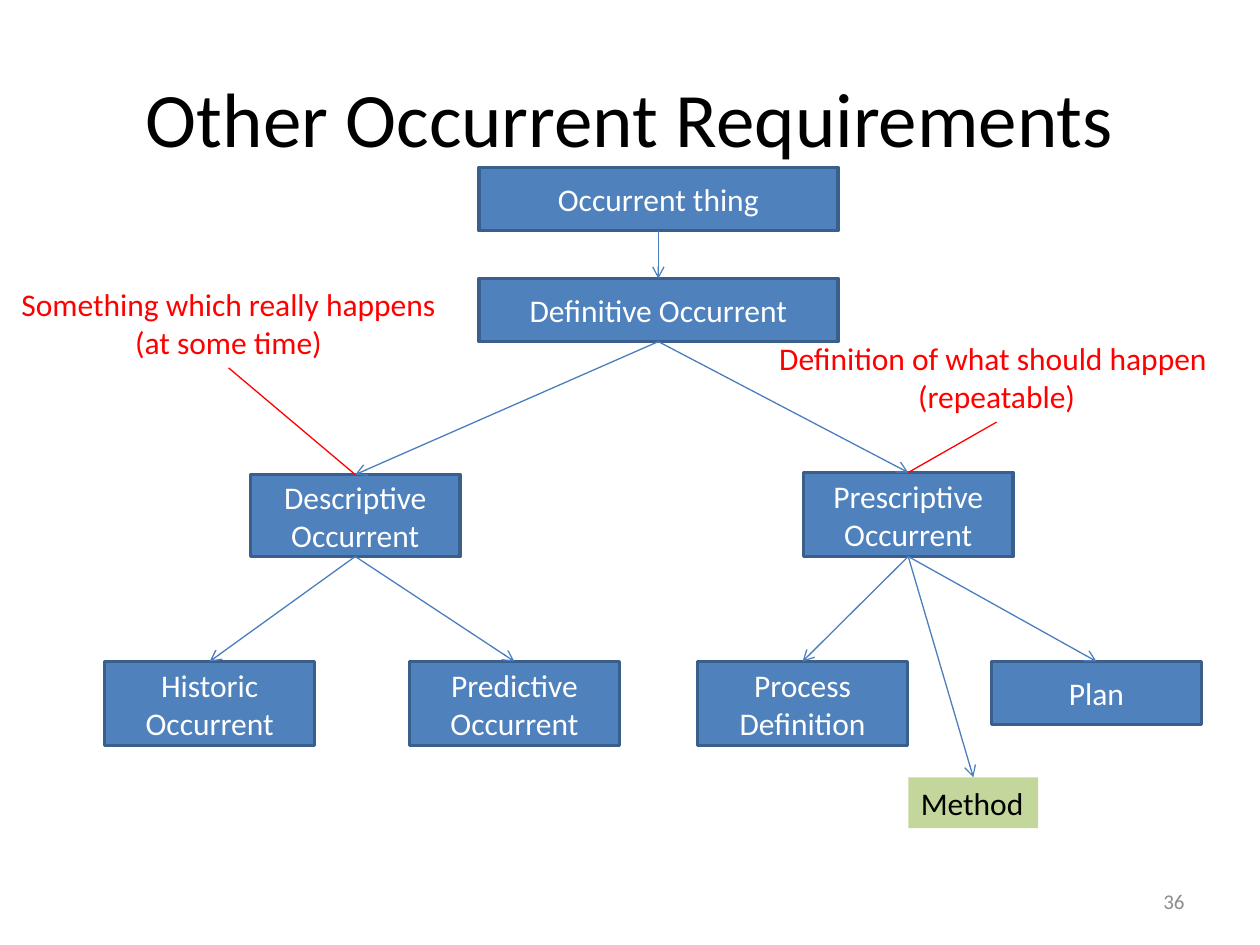
from lxml.etree import SubElement
from pptx import Presentation
from pptx.dml.color import RGBColor
from pptx.enum.shapes import MSO_CONNECTOR, MSO_SHAPE
from pptx.enum.text import MSO_ANCHOR as Anchor, PP_ALIGN as Align
from pptx.oxml.ns import qn
from pptx.util import Pt

BLACK = RGBColor(0x00, 0x00, 0x00)
WHITE = RGBColor(0xFF, 0xFF, 0xFF)
RED = RGBColor(0xFF, 0x00, 0x00)
GRAY = RGBColor(0x8C, 0x8C, 0x8C)
GREEN = RGBColor(0xC3, 0xD6, 0x9B)
BOX_BLUE = RGBColor(0x4F, 0x81, 0xBD)
EDGE_BLUE = RGBColor(0x3A, 0x5F, 0x8C)
ARROW_BLUE = RGBColor(0x4B, 0x7E, 0xBC)
TOP, BOTTOM = 0, 2  # connection sites of a rectangle


def write(shape, text, size, color, align=Align.CENTER, **frame_format):
    """Fill the shape with text, one paragraph per line."""
    frame = shape.text_frame
    frame.text = text
    for attribute, value in frame_format.items():
        setattr(frame, attribute, value)
    for paragraph in frame.paragraphs:
        paragraph.alignment = align
        font = paragraph.runs[0].font
        for attribute, value in {"name": "Calibri", "size": Pt(size)}.items():
            setattr(font, attribute, value)
        font.color.rgb = color


def connect(start, start_site, end, end_site, color):
    line = slide.shapes.add_connector(MSO_CONNECTOR.STRAIGHT, 0, 0, 0, 0)
    line.begin_connect(start, start_site)
    line.end_connect(end, end_site)
    line.line.color.rgb = color
    line.line.width = Pt(0.75)
    SubElement(line._element.spPr, qn("a:effectLst"))
    return line


prs = Presentation()
prs.slide_width, prs.slide_height = Pt(720), Pt(540)
slide = prs.slides.add_slide(prs.slide_layouts[5])

title = slide.shapes.title
place = {"left": 36, "top": 21.6, "width": 648, "height": 90}
for attribute, value in place.items():
    setattr(title, attribute, Pt(value))
write(title, "Other Occurrent Requirements", 44, BLACK,
      vertical_anchor=Anchor.MIDDLE)

# Class boxes: left, top, width, height
classes = {
    "Occurrent thing": (273.6, 95.8, 205.2, 36),
    "Definitive Occurrent": (273.6, 159.2, 205.2, 36),
    "Descriptive Occurrent": (143, 271.2, 120, 46.8),
    "Prescriptive Occurrent": (459, 270, 120, 48),
    "Historic Occurrent": (59.8, 378, 120, 48),
    "Predictive Occurrent": (234, 378, 120, 48),
    "Process Definition": (398.6, 378, 120, 48),
    "Plan": (566.6, 378, 120, 36),
    "Method": (519.1, 444.2, 74.2, 29.1),
}
nodes = {}
for label, place in classes.items():
    node = slide.shapes.add_shape(MSO_SHAPE.RECTANGLE, *map(Pt, place))
    node.shadow.inherit = False
    node.fill.solid()
    if label == "Method":
        node.fill.fore_color.rgb = GREEN
        node.line.fill.background()
        write(node, label, 18, BLACK, Align.LEFT, word_wrap=False,
              vertical_anchor=Anchor.TOP)
    else:
        node.fill.fore_color.rgb = BOX_BLUE
        node.line.color.rgb = EDGE_BLUE
        node.line.width = Pt(2)
        write(node, label, 18, WHITE, word_wrap=True,
              vertical_anchor=Anchor.MIDDLE)
    nodes[label] = node

subclasses = {
    "Occurrent thing": ["Definitive Occurrent"],
    "Definitive Occurrent": ["Descriptive Occurrent", "Prescriptive Occurrent"],
    "Descriptive Occurrent": ["Historic Occurrent", "Predictive Occurrent"],
    "Prescriptive Occurrent": ["Process Definition", "Plan", "Method"],
}

# Red explanations, each tied to the class it explains
explanations = [
    ("Something which really happens\n(at some time)",
     (3.6, 159.2, 254, 51), "Descriptive Occurrent"),
    ("Definition of what should happen \n(repeatable)",
     (436.4, 190.2, 266.2, 51), "Prescriptive Occurrent"),
]
for text, place, label in explanations:
    explanation = slide.shapes.add_textbox(*map(Pt, place))
    write(explanation, text, 18, RED, word_wrap=False)
    connect(explanation, BOTTOM, nodes[label], TOP, RED)

for parent, children in subclasses.items():
    for child in children:
        arrow = connect(nodes[parent], BOTTOM, nodes[child], TOP, ARROW_BLUE)
        SubElement(arrow.line._get_or_add_ln(), qn("a:tailEnd"), type="arrow")

page_number = slide.shapes.add_textbox(Pt(516), Pt(500.5), Pt(168), Pt(28.8))
write(page_number, "36", 12, GRAY, Align.RIGHT, word_wrap=True,
      vertical_anchor=Anchor.MIDDLE)

prs.save("out.pptx")
